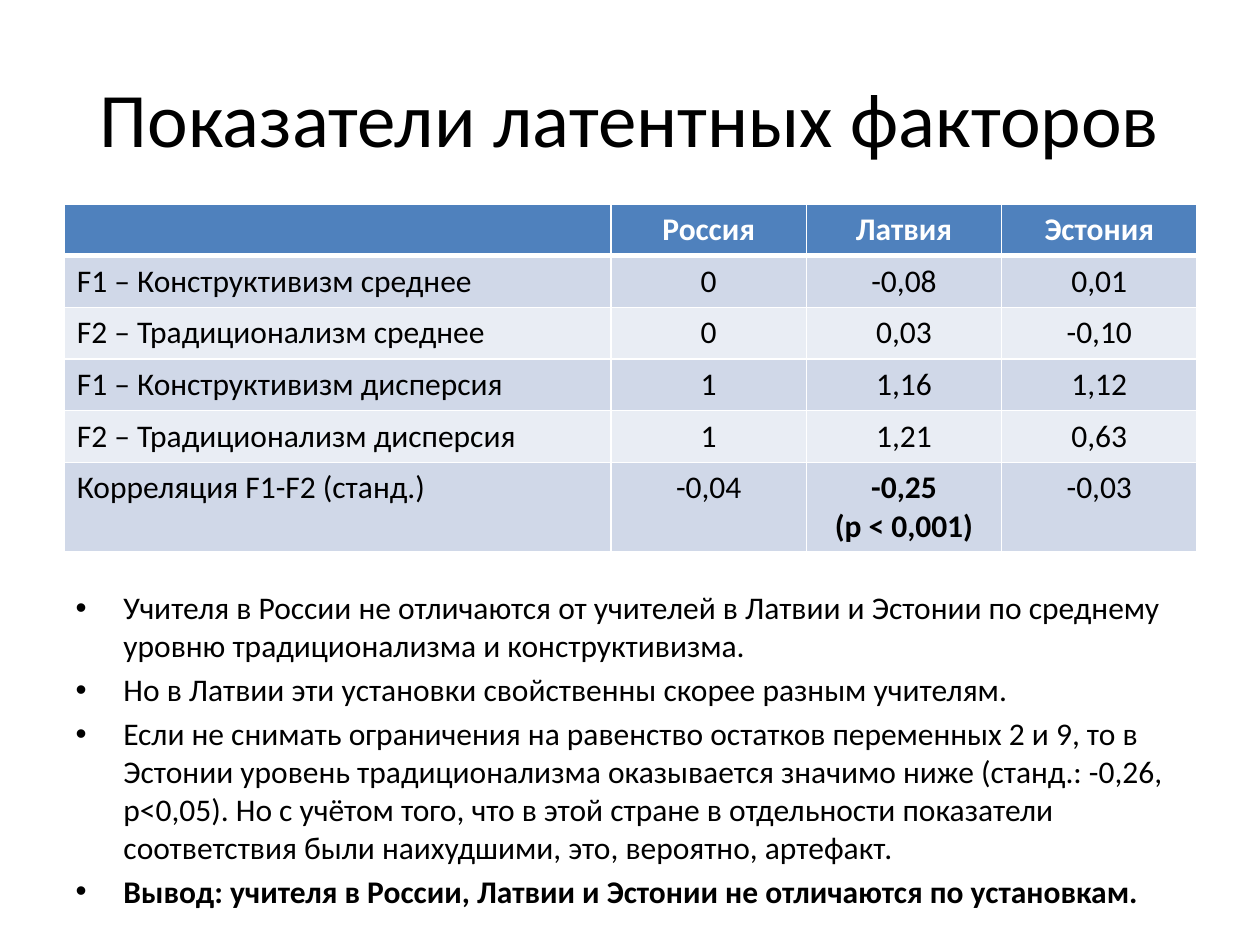
"""Build a slide with a table of latent factor scores and its conclusions."""
from lxml import etree
from pptx import Presentation
from pptx.dml.color import RGBColor
from pptx.enum.text import MSO_ANCHOR, MSO_AUTO_SIZE, PP_ALIGN
from pptx.oxml.ns import qn
from pptx.util import Inches, Pt

LEFT, MID = PP_ALIGN.LEFT, PP_ALIGN.CENTER
CENTER, TOP = MSO_ANCHOR.MIDDLE, MSO_ANCHOR.TOP
FIXED = MSO_AUTO_SIZE.NONE
COLORS = {"text": "000000", "white": "FFFFFF", "head": "4F81BD",
          "odd": "D0D8E8", "even": "E9EDF4"}


def add_run(para, text, size=18, color="text", bold=False):
    run = para.add_run()
    run.text = text
    run.font.name = "Calibri"
    run.font.size = Pt(size)
    run.font.bold = bold
    run.font.color.rgb = RGBColor.from_string(COLORS[color])


def add_edge(cell, side, width):
    line = etree.SubElement(cell._tc.get_or_add_tcPr(), qn("a:ln" + side), w=str(Pt(width)))
    fill = etree.SubElement(line, qn("a:solidFill"))
    etree.SubElement(fill, qn("a:srgbClr"), val=COLORS["white"])


prs = Presentation()
prs.slide_width, prs.slide_height = Inches(10), Inches(7.5)
slide = prs.slides.add_slide(prs.slide_layouts[1])
title, body = slide.placeholders

title.left, title.top = Inches(0.5), Inches(0.3)
title.width, title.height = Inches(9), Inches(1.25)
title.text_frame.auto_size = FIXED
title.text_frame.vertical_anchor = CENTER
head = title.text_frame.paragraphs[0]
head.alignment = MID
add_run(head, "Показатели латентных факторов", 44)

rows = [
    ["", "Россия", "Латвия", "Эстония"],
    ["F1 – Конструктивизм среднее", "0", "-0,08", "0,01"],
    ["F2 – Традиционализм среднее", "0", "0,03", "-0,10"],
    ["F1 – Конструктивизм дисперсия", "1", "1,16", "1,12"],
    ["F2 – Традиционализм дисперсия", "1", "1,21", "0,63"],
    ["Корреляция F1-F2 (станд.)", "-0,04", "-0,25\n(p < 0,001)", "-0,03"],
]
widths = [4.34, 1.55, 1.55, 1.55]
table = slide.shapes.add_table(len(rows), len(widths), Inches(0.51), Inches(1.62),
                               Inches(sum(widths)), Inches(0.41 * len(rows))).table
for col, width in zip(table.columns, widths):
    col.width = Inches(width)

for r, row in enumerate(rows):
    table.rows[r].height = Inches(0.41)
    shade = "head" if r == 0 else "odd" if r % 2 else "even"
    for c, text in enumerate(row):
        cell = table.cell(r, c)
        for side in "LRTB":
            thick = (r, side) in [(0, "B"), (1, "T")]
            add_edge(cell, side, 3 if thick else 1)
        cell.fill.solid()
        cell.fill.fore_color.rgb = RGBColor.from_string(COLORS[shade])
        para = cell.text_frame.paragraphs[0]
        para.alignment = MID if c else LEFT
        for n, part in enumerate(text.split("\n")):
            if n:
                para.add_line_break()
            if part:
                add_run(para, part, color="text" if r else "white",
                        bold=r == 0 or "\n" in text)

points = [
    "Учителя в России не отличаются от учителей в Латвии и Эстонии по среднему "
    "уровню традиционализма и конструктивизма.",
    "Но в Латвии эти установки свойственны скорее разным учителям.",
    "Если не снимать ограничения на равенство остатков переменных 2 и 9, то в "
    "Эстонии уровень традиционализма оказывается значимо ниже (станд.: -0,26, "
    "p<0,05). Но с учётом того, что в этой стране в отдельности показатели "
    "соответствия были наихудшими, это, вероятно, артефакт.",
    "Вывод: учителя в России, Латвии и Эстонии не отличаются по установкам.",
]
body.left, body.top = Inches(0.5), Inches(4.62)
body.width, body.height = Inches(9), Inches(2.88)
frame = body.text_frame
frame.auto_size = FIXED
frame.vertical_anchor = TOP
for n, text in enumerate(points):
    para = frame.add_paragraph() if n else frame.paragraphs[0]
    props = para._p.get_or_add_pPr()
    props.set("marL", str(Inches(0.38)))
    props.set("indent", str(-Inches(0.38)))
    etree.SubElement(props, qn("a:buChar"), char="•")
    add_run(para, text, bold=text == points[-1])

prs.save("out.pptx")
